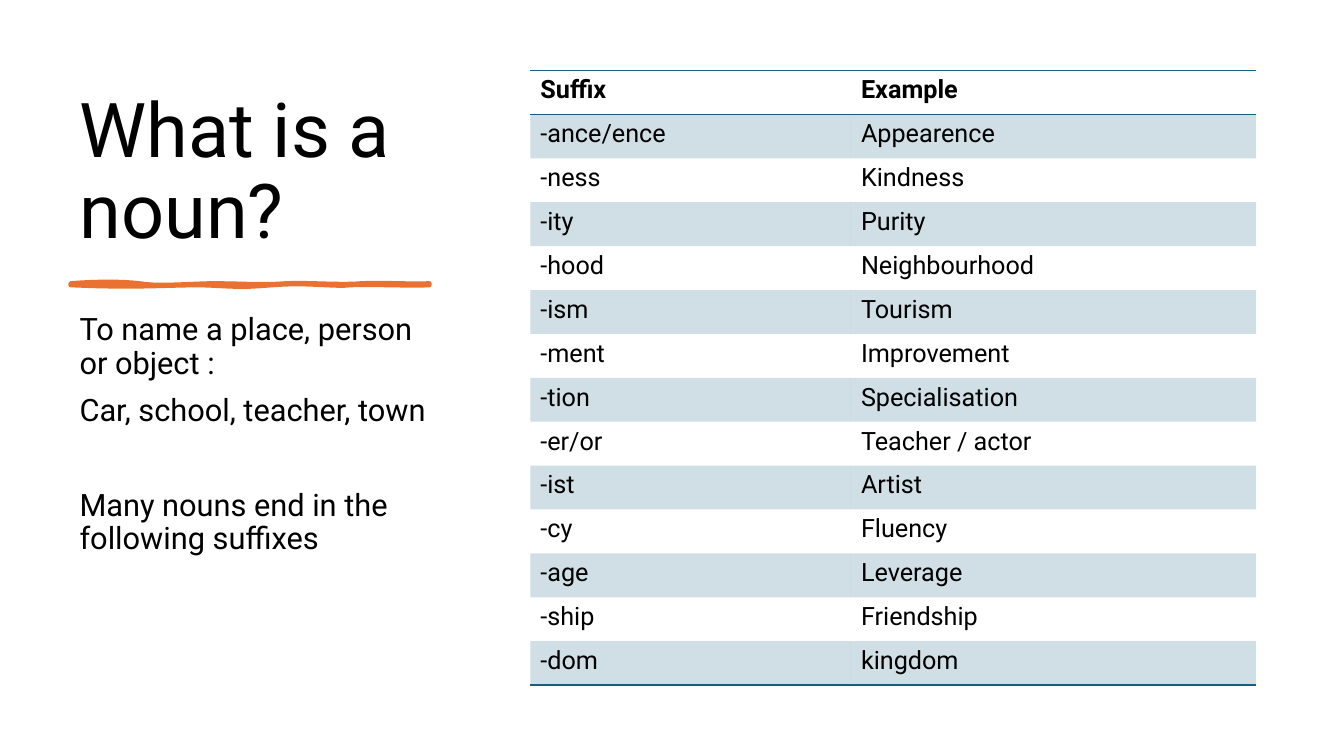
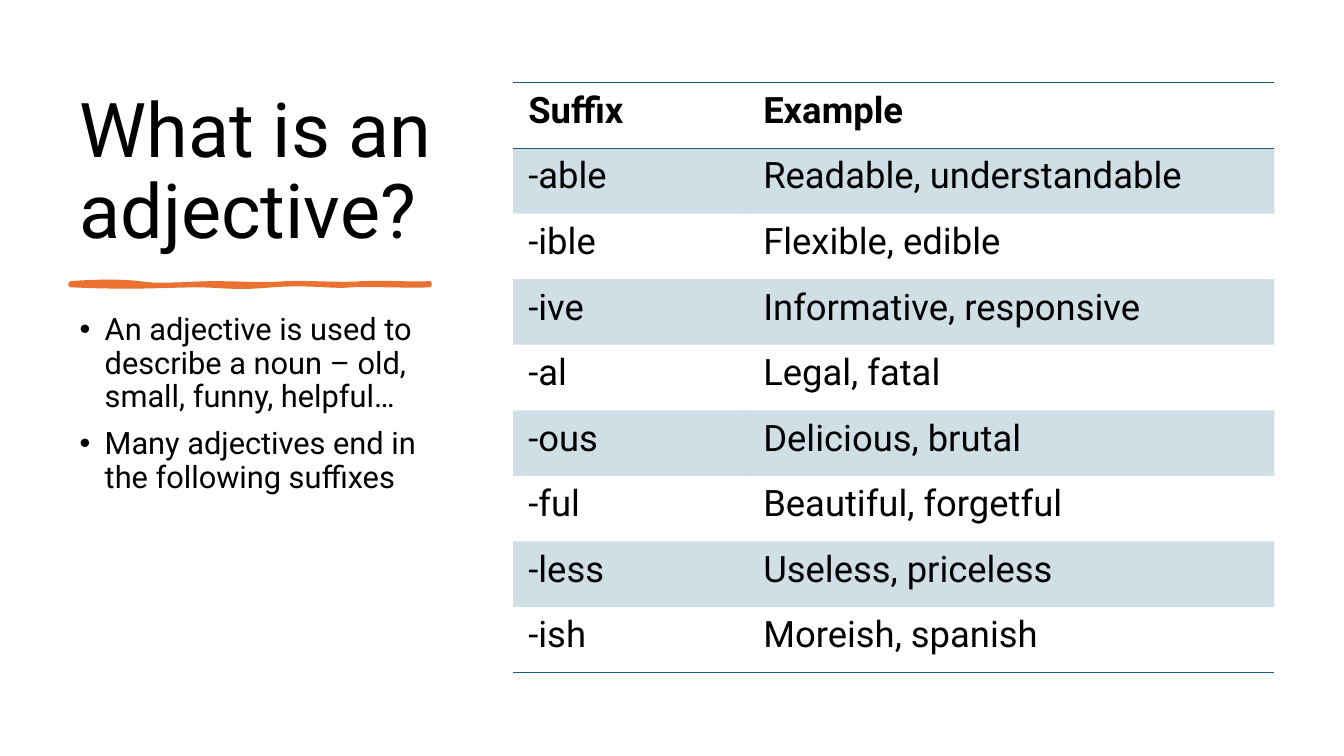
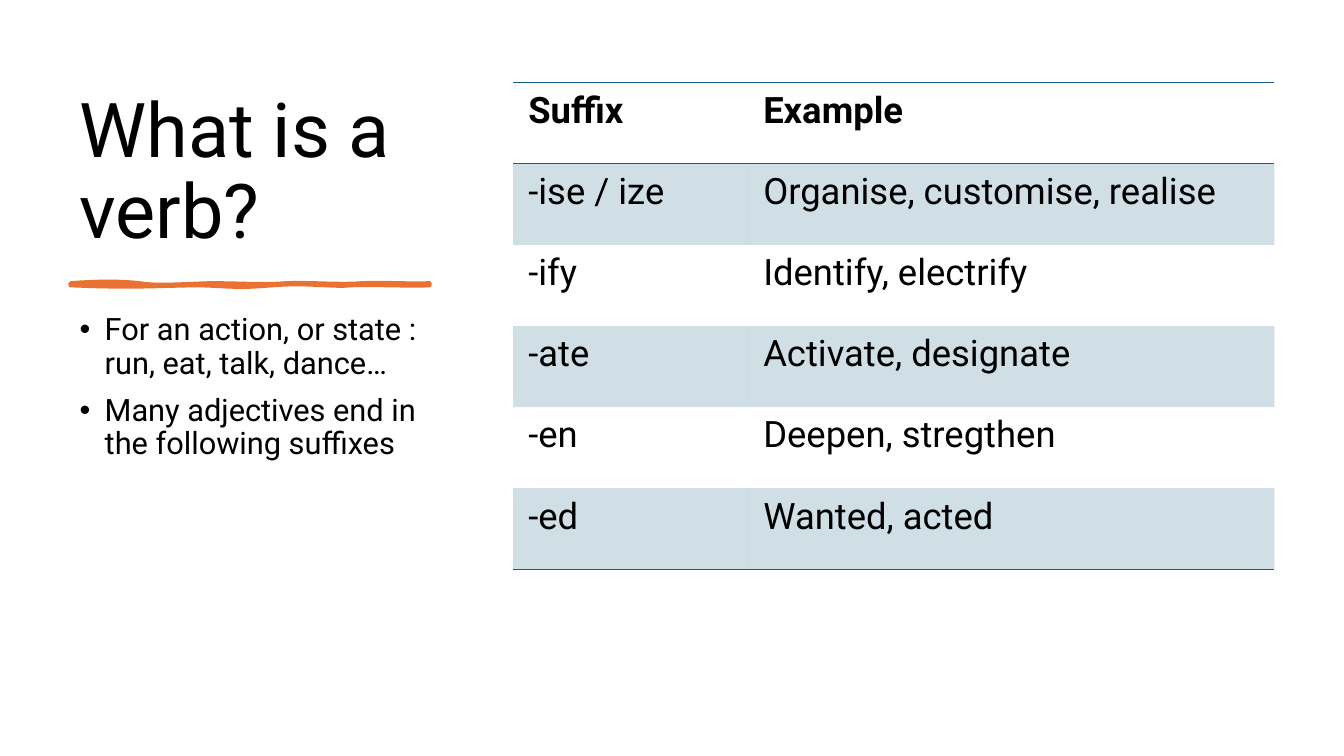
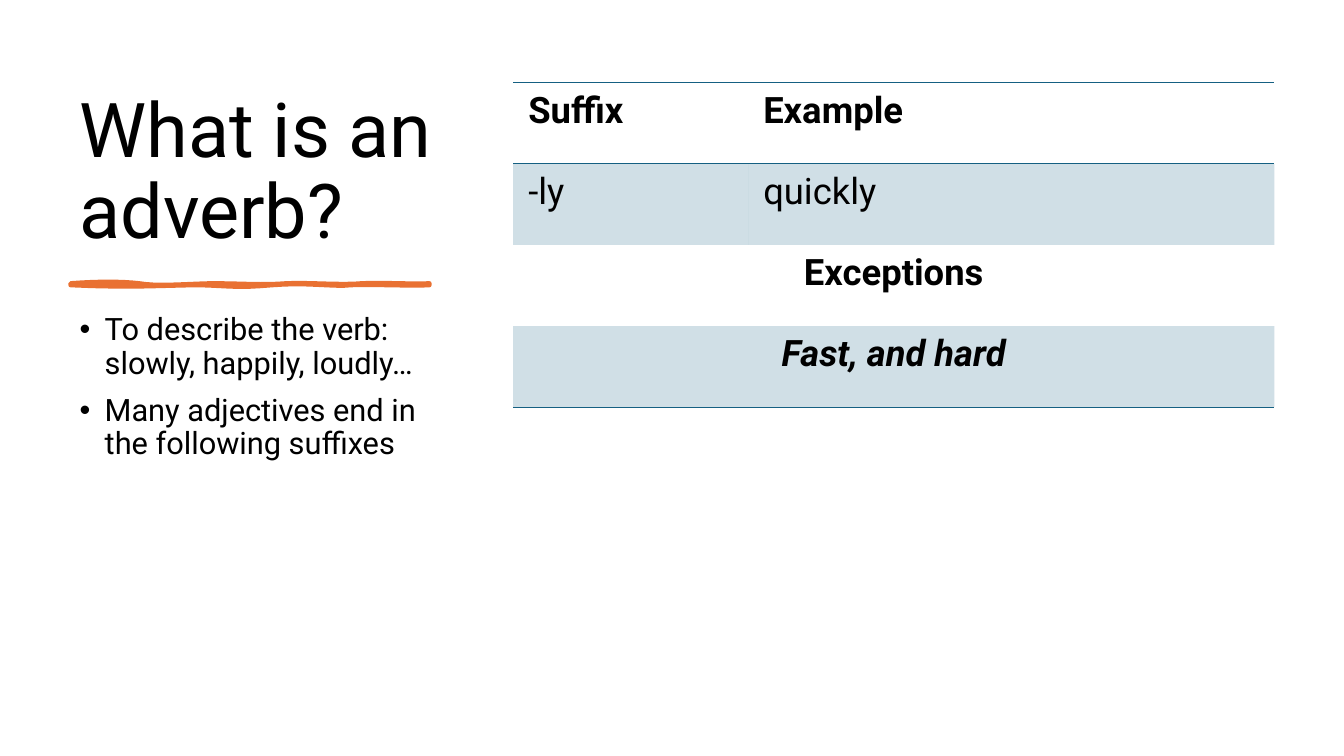
from dataclasses import dataclass

from lxml.etree import SubElement
from pptx import Presentation
from pptx.dml.color import RGBColor
from pptx.enum.text import MSO_ANCHOR, PP_ALIGN
from pptx.oxml import parse_xml
from pptx.oxml.ns import nsdecls, qn
from pptx.slide import Slide
from pptx.table import Table, _Cell
from pptx.text.text import TextFrame, _Paragraph
from pptx.util import Inches, Pt

# Shared style
FONT = "Roboto"
BLACK = RGBColor(0x00, 0x00, 0x00)
TEAL = RGBColor(0x15, 0x60, 0x82)
ORANGE = RGBColor(0xE9, 0x71, 0x32)
BAND_ALPHA = 20
NO_GRID_STYLE = "{2D5ABB26-0587-4C30-8999-92F81FD0307C}"
COLUMN_LEFT, COLUMN_WIDTH = 0.69, 3.75

# Brush stroke: a start point, then cubic curves (two controls and an end)
STROKE_START = (0.7, 2.81)
STROKE_CURVES = [
    ((0.97, 2.79), (1.21, 2.79), (1.38, 2.81)),
    ((1.55, 2.84), (1.77, 2.82), (2.09, 2.81)),
    ((2.41, 2.81), (2.6, 2.83), (2.84, 2.81)),
    ((3.08, 2.8), (3.39, 2.83), (3.59, 2.81)),
    ((3.79, 2.8), (4.12, 2.82), (4.26, 2.81)),
    ((4.26, 2.82), (4.26, 2.83), (4.26, 2.83)),
    ((4.08, 2.84), (3.64, 2.82), (3.48, 2.83)),
    ((3.32, 2.85), (3.04, 2.8), (2.7, 2.83)),
    ((2.35, 2.86), (2.31, 2.84), (1.99, 2.83)),
    ((1.66, 2.83), (1.32, 2.86), (0.7, 2.83)),
]
CURVE_STEPS = 8


@dataclass(frozen=True)
class Note:
    text: str
    bullet: bool = True
    space_before: float = 10


@dataclass(frozen=True)
class TableStyle:
    left: float
    top: float
    columns: tuple[float, float]
    text_size: float
    inset_x: float
    inset_y: float


@dataclass(frozen=True)
class Lesson:
    title: str
    notes: list[Note]
    rows: list[tuple[str, ...]]  # a row with one text spans both columns
    table_height: float
    style: TableStyle


COMPACT = TableStyle(5.26, 0.7, (3.18, 4.02), 18, 0.1, 0.05)
LARGE = TableStyle(5.09, 0.82, (2.33, 5.22), 26, 0.15, 0.07)
HEADER = ("Suffix", "Example")
SUFFIX_NOTE = Note("Many adjectives end in the following suffixes")

LESSONS = [
    Lesson(
        "What is a noun?",
        [
            Note("To name a place, person or object :", bullet=False),
            Note("Car, school, teacher, town", bullet=False),
            Note("Many nouns end in the following suffixes", bullet=False, space_before=44),
        ],
        [
            ("-ance/ence", "Appearence"),
            ("-ness", "Kindness"),
            ("-ity", "Purity"),
            ("-hood", "Neighbourhood"),
            ("-ism", "Tourism"),
            ("-ment", "Improvement"),
            ("-tion", "Specialisation"),
            ("-er/or", "Teacher / actor"),
            ("-ist", "Artist"),
            ("-cy", "Fluency"),
            ("-age", "Leverage"),
            ("-ship", "Friendship"),
            ("-dom", "kingdom"),
        ],
        6.1,
        COMPACT,
    ),
    Lesson(
        "What is an adjective?",
        [
            Note("An adjective is used to describe a noun – old, small, funny, helpful…"),
            SUFFIX_NOTE,
        ],
        [
            ("-able", "Readable, understandable"),
            ("-ible", "Flexible, edible"),
            ("-ive", "Informative, responsive"),
            ("-al", "Legal, fatal"),
            ("-ous", "Delicious, brutal"),
            ("-ful", "Beautiful, forgetful"),
            ("-less", "Useless, priceless"),
            ("-ish", "Moreish, spanish"),
        ],
        5.85,
        LARGE,
    ),
    Lesson(
        "What is a verb?",
        [Note("For an action, or state : run, eat, talk, dance…"), SUFFIX_NOTE],
        [
            ("-ise / ize", "Organise, customise, realise"),
            ("-ify", "Identify, electrify"),
            ("-ate", "Activate, designate"),
            ("-en", "Deepen, stregthen"),
            ("-ed", "Wanted, acted"),
        ],
        4.83,
        LARGE,
    ),
    Lesson(
        "What is an adverb?",
        [Note("To describe the verb: slowly, happily, loudly…"), SUFFIX_NOTE],
        [("-ly", "quickly"), ("Exceptions",), ("Fast, and hard",)],
        3.22,
        LARGE,
    ),
]
ITALIC_TEXTS = {"Fast, and hard"}


def write_text(
    paragraph: _Paragraph,
    text: str,
    *,
    size: float,
    bold: bool = False,
    italic: bool = False,
    alignment: PP_ALIGN = PP_ALIGN.LEFT,
    line_spacing: float = 1.0,
    space_before: float = 0,
    bullet: bool = False,
) -> None:
    paragraph.alignment = alignment
    paragraph.line_spacing = line_spacing
    paragraph.space_before = Pt(space_before)
    if bullet:
        properties = paragraph._p.get_or_add_pPr()
        properties.set("marL", str(Inches(0.25)))
        properties.set("indent", str(-Inches(0.25)))
        SubElement(properties, qn("a:buFont"), typeface="Arial")
        SubElement(properties, qn("a:buChar"), char="•")
    run = paragraph.add_run()
    run.text = text
    run.font.name = FONT
    run.font.size = Pt(size)
    run.font.bold = bold
    run.font.italic = italic
    run.font.color.rgb = BLACK


def add_text_frame(slide: Slide, top: float, height: float, anchor: MSO_ANCHOR) -> TextFrame:
    box = slide.shapes.add_textbox(
        Inches(COLUMN_LEFT), Inches(top), Inches(COLUMN_WIDTH), Inches(height)
    )
    box.text_frame.word_wrap = True
    box.text_frame.vertical_anchor = anchor
    return box.text_frame


def add_title(slide: Slide, title: str) -> None:
    frame = add_text_frame(slide, 0.7, 1.88, MSO_ANCHOR.BOTTOM)
    write_text(frame.paragraphs[0], title, size=54, line_spacing=0.9)


def add_notes(slide: Slide, notes: list[Note]) -> None:
    frame = add_text_frame(slide, 3.07, 3.73, MSO_ANCHOR.TOP)
    for index, note in enumerate(notes):
        paragraph = frame.add_paragraph() if index else frame.paragraphs[0]
        write_text(
            paragraph,
            note.text,
            size=22,
            line_spacing=0.9,
            space_before=note.space_before,
            bullet=note.bullet,
        )


def stroke_points() -> list[tuple[int, int]]:
    """Follow the cubic curves in short straight steps."""
    points = []
    start = STROKE_START
    for first, second, end in STROKE_CURVES:
        for step in range(1, CURVE_STEPS + 1):
            t = step / CURVE_STEPS
            u = 1 - t
            x, y = (
                u**3 * a + 3 * u**2 * t * b + 3 * u * t**2 * c + t**3 * d
                for a, b, c, d in zip(start, first, second, end)
            )
            points.append((Inches(x), Inches(y)))
        start = end
    return points


def add_brush_stroke(slide: Slide) -> None:
    left, top = STROKE_START
    builder = slide.shapes.build_freeform(Inches(left), Inches(top))
    builder.add_line_segments(stroke_points(), close=True)
    stroke = builder.convert_to_shape()
    stroke.shadow.inherit = False
    stroke.fill.solid()
    stroke.fill.fore_color.rgb = ORANGE
    stroke.line.color.rgb = ORANGE
    stroke.line.width = Pt(3)


def add_border(cell: _Cell, side: str) -> None:
    border = parse_xml(
        f'<a:{side} {nsdecls("a")} w="{Pt(1)}"><a:solidFill>'
        f'<a:srgbClr val="{TEAL}"/></a:solidFill></a:{side}>'
    )
    cell._tc.get_or_add_tcPr().insert(0, border)


def format_cell(cell: _Cell, style: TableStyle, banded: bool, sides: list[str]) -> None:
    cell.margin_left = cell.margin_right = Inches(style.inset_x)
    cell.margin_top = cell.margin_bottom = Inches(style.inset_y)
    if banded:
        cell.fill.solid()
        cell.fill.fore_color.rgb = TEAL
        color = cell._tc.tcPr.find(f".//{qn('a:srgbClr')}")
        SubElement(color, qn("a:alpha"), val=str(BAND_ALPHA * 1000))
    else:
        cell.fill.background()
    for side in sides:
        add_border(cell, side)


def fill_row(table: Table, index: int, texts: tuple[str, ...], style: TableStyle) -> None:
    is_header = index == 0
    is_last = index == len(table.rows) - 1
    sides = ["lnB", "lnT"] if is_header else ["lnB"] if is_last else []
    spans = len(texts) == 1
    for column in range(len(style.columns)):
        format_cell(table.cell(index, column), style, index % 2 == 1, sides)
    if spans:
        table.cell(index, 0).merge(table.cell(index, 1))
    for column, text in enumerate(texts):
        write_text(
            table.cell(index, column).text_frame.paragraphs[0],
            text,
            size=style.text_size,
            bold=is_header or spans,
            italic=text in ITALIC_TEXTS,
            alignment=PP_ALIGN.CENTER if spans else PP_ALIGN.LEFT,
        )


def add_suffix_table(slide: Slide, lesson: Lesson) -> None:
    style = lesson.style
    rows = [HEADER, *lesson.rows]
    table = slide.shapes.add_table(
        len(rows),
        len(style.columns),
        Inches(style.left),
        Inches(style.top),
        Inches(sum(style.columns)),
        Inches(lesson.table_height),
    ).table
    table.first_row = table.horz_banding = False
    table._tbl.tblPr.find(qn("a:tableStyleId")).text = NO_GRID_STYLE
    for column, width in zip(table.columns, style.columns):
        column.width = Inches(width)
    for index, texts in enumerate(rows):
        fill_row(table, index, texts, style)


def main() -> None:
    presentation = Presentation()
    presentation.slide_width = Inches(13.33)
    presentation.slide_height = Inches(7.5)
    blank_layout = presentation.slide_layouts[6]
    for lesson in LESSONS:
        slide = presentation.slides.add_slide(blank_layout)
        add_title(slide, lesson.title)
        add_brush_stroke(slide)
        add_notes(slide, lesson.notes)
        add_suffix_table(slide, lesson)
    presentation.save("out.pptx")


if __name__ == "__main__":
    main()
